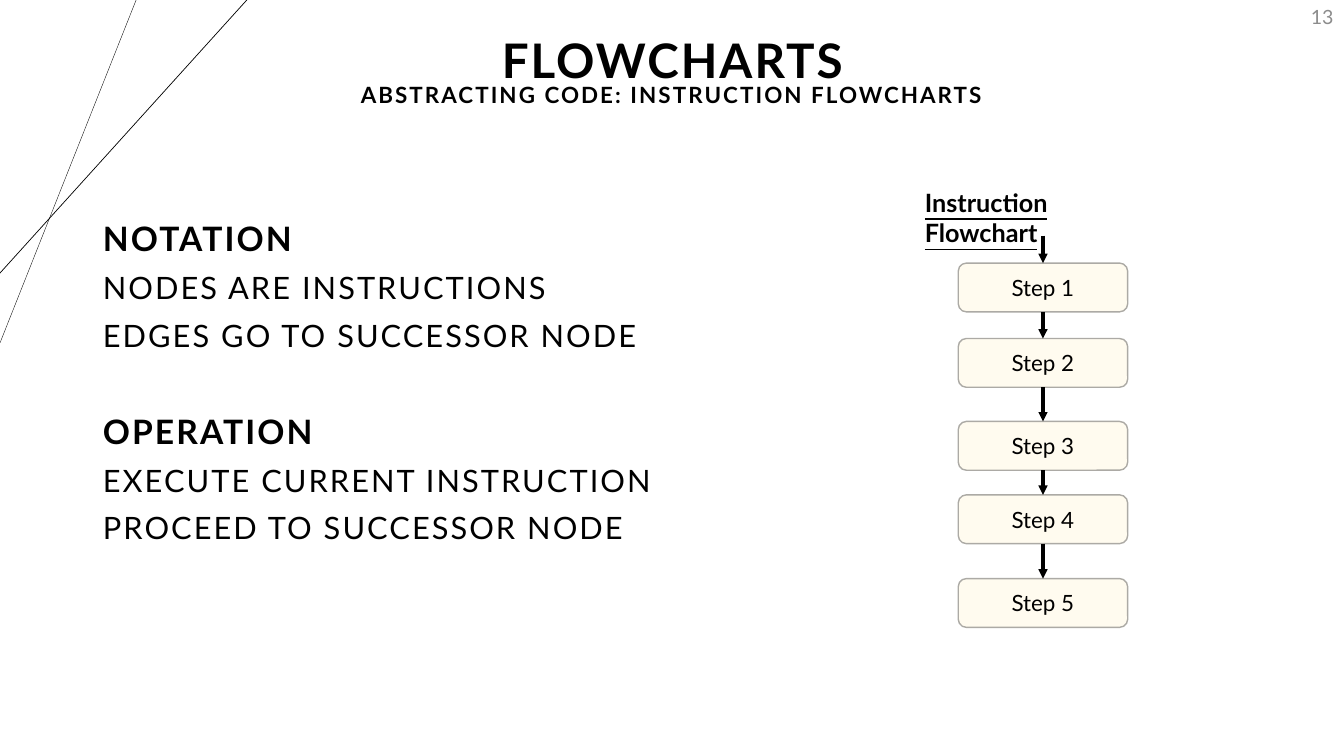
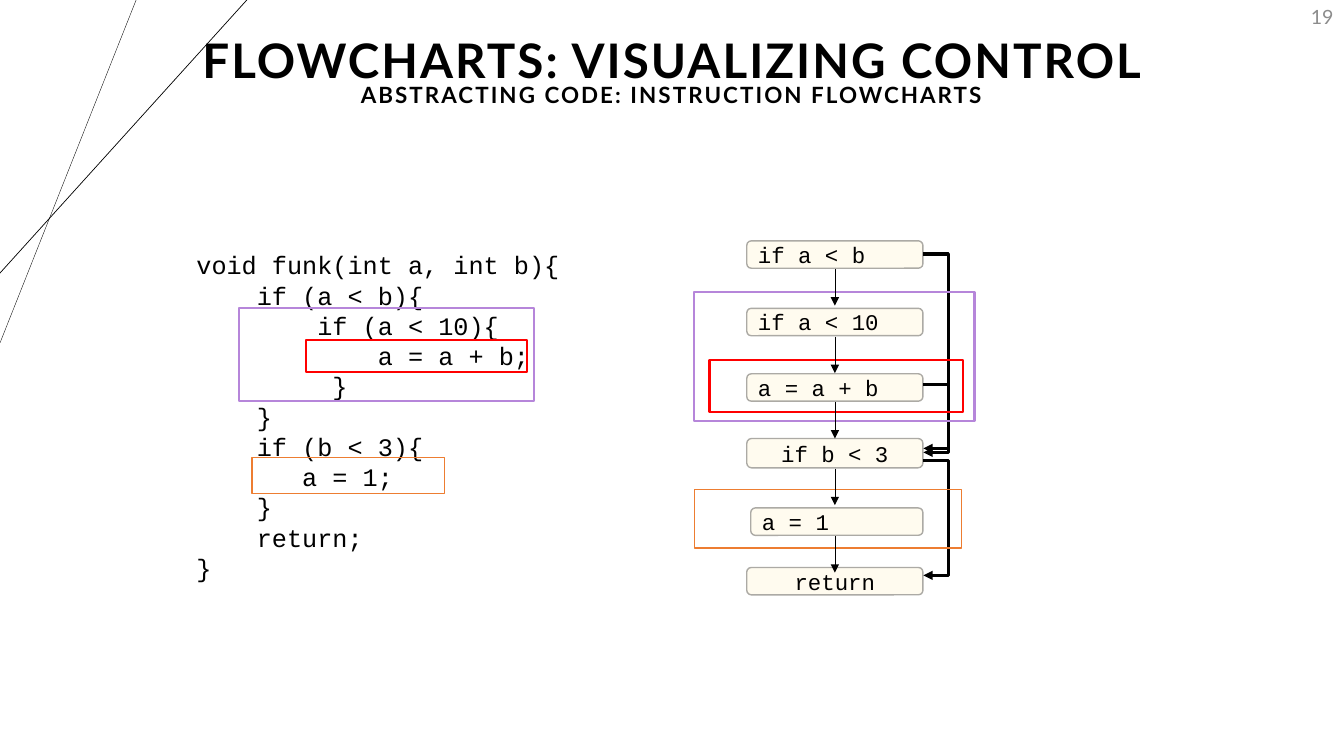
from lxml import etree
from pptx import Presentation
from pptx import util as u
from pptx.dml import color
from pptx.enum import shapes, text
from pptx.oxml import ns

BLACK = color.RGBColor(0x00, 0x00, 0x00)
GREY = color.RGBColor(0x8C, 0x8C, 0x8C)
CREAM = color.RGBColor(0xFF, 0xF2, 0xCC)
BORDER = color.RGBColor(0xAC, 0xAA, 0xA5)
ORANGE = color.RGBColor(0xED, 0x7D, 0x31)
PURPLE = color.RGBColor(0xB6, 0x86, 0xDA)
RED = color.RGBColor(0xFF, 0x00, 0x00)
SANS, MONO = "Lato", "Courier New"
LEFT, CENTER, RIGHT = text.PP_ALIGN.LEFT, text.PP_ALIGN.CENTER, text.PP_ALIGN.RIGHT
TITLE_ONLY, TITLE_AND_BODY = 5, 1
SUBTITLE = "ABSTRACTING CODE: INSTRUCTION FLOWCHARTS"

BODY = [  # text, size, bold, space before
    ("NOTATION", 24, True, 10),
    ("NODES ARE INSTRUCTIONS", 22, False, 10),
    ("EDGES GO TO SUCCESSOR NODE", 22, False, 10),
    ("OPERATION", 24, True, 44),
    ("EXECUTE CURRENT INSTRUCTION", 22, False, 10),
    ("PROCEED TO SUCCESSOR NODE", 22, False, 10),
]
STEP_OFFSETS = [0, 1.9, 3.99, 5.84, 7.95]
CODE = [  # indent in characters, text
    (0, "void funk(int a, int b){"), (4, "if (a < b){"), (8, "if (a < 10){"),
    (12, "a = a + b;"), (9, "}"), (4, "}"), (4, "if (b < 3){"),
    (7, "a = 1;"), (4, "}"), (4, "return;"), (0, "}"),
]
NODES = [  # text, top, inset from the left, height, alignment
    ("if a < b", 0, 0, 0.69, LEFT), ("if a < 10", 1.7, 0, 0.69, LEFT),
    ("a = a + b", 3.35, 0, 0.69, LEFT), ("if b < 3", 4.98, 0, 0.74, CENTER),
    ("a = 1", 6.73, 0.1, 0.69, LEFT), ("return", 8.23, 0, 0.69, CENTER),
]
JUMPS = [(0.33, 5.33), (3.61, 5.23), (5.54, 8.43)]  # from, to
CODE_FRAMES = [  # left, top, width, height, colour, line width
    (1.65, 5.36, 4.85, 0.91, ORANGE, 1),
    (1.32, 1.6, 7.44, 2.34, PURPLE, 1.5),
    (3.02, 2.39, 5.56, 0.81, RED, 1.5),
]
CHART_FRAMES = [
    (-1.32, 6.27, 6.73, 1.47, ORANGE, 1),
    (-1.32, 1.3, 7.06, 3.25, PURPLE, 1.5),
    (-0.94, 3, 6.38, 1.32, RED, 1.5),
]


def place(shape, left, top, width, height):
    shape.left, shape.top = u.Cm(left), u.Cm(top)
    shape.width, shape.height = u.Cm(width), u.Cm(height)


def add_run(paragraph, words, size, font=SANS, colour=BLACK, bold=False, tracking=0):
    run = paragraph.add_run()
    run.text = words
    run.font.name, run.font.size, run.font.bold = font, u.Pt(size), bold
    run.font.color.rgb = colour
    if tracking:
        run.font._element.set("spc", str(int(tracking * 100)))
    return run


def add_text_box(slide, left, top, width, height, anchor=text.MSO_ANCHOR.TOP):
    box = slide.shapes.add_textbox(u.Cm(left), u.Cm(top), u.Cm(width), u.Cm(height))
    box.text_frame.word_wrap = True
    box.text_frame.vertical_anchor = anchor
    return box.text_frame


def paragraph_at(frame, index):
    return frame.paragraphs[0] if index == 0 else frame.add_paragraph()


def add_line(slide, start, end, width, arrow=False, kind=shapes.MSO_CONNECTOR.STRAIGHT):
    points = [u.Cm(value) for value in (*start, *end)]
    line = slide.shapes.add_connector(kind, *points)
    line.line.color.rgb, line.line.width = BLACK, u.Pt(width)
    etree.SubElement(line._element.spPr, ns.qn("a:effectLst"))
    if arrow:
        etree.SubElement(line.line._get_or_add_ln(), ns.qn("a:tailEnd"), type="triangle")
    return line


def add_jump(slide, right, start, end, reach=0.64):
    """Arrow that leaves a node on the right and comes back lower down."""
    width = 0.01
    line = add_line(slide, (right, start), (right + width, end), 2.25, True,
                    shapes.MSO_CONNECTOR.ELBOW)
    guides = line._element.spPr.find(ns.qn("a:prstGeom")).get_or_add_avLst()
    etree.SubElement(guides, ns.qn("a:gd"), name="adj1",
                     fmla=f"val {round(reach / width * 100000)}")


def add_node(slide, words, left, top, width, height, font=SANS, align=CENTER):
    node = slide.shapes.add_shape(shapes.MSO_SHAPE.ROUNDED_RECTANGLE, u.Cm(left),
                                  u.Cm(top), u.Cm(width), u.Cm(height))
    node.shadow.inherit = False
    node.fill.solid()
    node.fill.fore_color.rgb = CREAM
    fill = node._element.spPr.find(ns.qn("a:solidFill"))
    etree.SubElement(fill[0], ns.qn("a:alpha"), val="30000")
    node.line.color.rgb, node.line.width = BORDER, u.Pt(1)
    node.text_frame.vertical_anchor = text.MSO_ANCHOR.MIDDLE
    paragraph = node.text_frame.paragraphs[0]
    paragraph.alignment = align
    add_run(paragraph, words, 16, font)


def add_frames(slide, left, top, frames):
    for dx, dy, width, height, colour, weight in frames:
        frame = slide.shapes.add_shape(shapes.MSO_SHAPE.RECTANGLE, u.Cm(left + dx),
                                       u.Cm(top + dy), u.Cm(width), u.Cm(height))
        frame.shadow.inherit = False
        frame.fill.background()
        frame.line.color.rgb, frame.line.width = colour, u.Pt(weight)


def add_heading(frame, words, size):
    frame.vertical_anchor = text.MSO_ANCHOR.MIDDLE
    paragraph = frame.paragraphs[0]
    paragraph.alignment, paragraph.line_spacing = CENTER, 0.9
    add_run(paragraph, words, size, bold=True, tracking=1.5)


def add_base_slide(presentation, layout, title, number):
    """Slide with the corner lines, page number, title and subtitle."""
    slide = presentation.slides.add_slide(presentation.slide_layouts[layout])
    add_line(slide, (3.43, 0), (0, 8.64), 0.25)
    add_line(slide, (6.22, 0), (0, 6.88), 0.5)
    paragraph = add_text_box(slide, 26.24, -0.1, 7.62, 1.02,
                             text.MSO_ANCHOR.MIDDLE).paragraphs[0]
    paragraph.alignment = RIGHT
    add_run(paragraph, number, 14, colour=GREY)
    place(slide.shapes.title, 0.05, -0.25, 33.8, 3.68)
    slide.shapes.title.text_frame.auto_size = text.MSO_AUTO_SIZE.NONE
    add_heading(slide.shapes.title.text_frame, title, 34)
    add_heading(add_text_box(slide, 0.03, 0.58, 33.8, 3.68), SUBTITLE, 16)
    return slide


def fill_body(body, left, top, width, height):
    place(body, left, top, width, height)
    frame = body.text_frame
    frame.auto_size = text.MSO_AUTO_SIZE.NONE
    for index, (words, size, bold, before) in enumerate(BODY):
        paragraph = paragraph_at(frame, index)
        paragraph.line_spacing, paragraph.space_before = 0.9, u.Pt(before)
        properties = paragraph._p.get_or_add_pPr()
        properties.set("marL", "0")
        properties.set("indent", "0")
        etree.SubElement(properties, ns.qn("a:buNone"))
        add_run(paragraph, words, size, bold=bold, tracking=1.5)


def add_step_chart(slide, left, top, width=4.27, height=1.23):
    label = add_text_box(slide, left - 1.09, top - 2.03, 4.1, 1.8)
    add_run(label.paragraphs[0], "Instruction Flowchart", 18, bold=True).font.underline = True
    middle = left + width / 2
    previous_bottom = top - 0.69
    for index, offset in enumerate(STEP_OFFSETS, 1):
        step_top = top + offset
        add_node(slide, f"Step {index}", left, step_top, width, height)
        add_line(slide, (middle, previous_bottom), (middle, step_top), 2.25, True)
        previous_bottom = step_top + height


def add_code(slide, left, top, width=10, height=8.71):
    frame = add_text_box(slide, left, top, width, height)
    for index, (indent, words) in enumerate(CODE):
        paragraph = paragraph_at(frame, index)
        paragraph._p.get_or_add_pPr().set("marL", str(int(u.Pt(10.8 * indent))))
        add_run(paragraph, words, 18, MONO)
    add_frames(slide, left, top, CODE_FRAMES)


def add_control_chart(slide, left, top, width=4.44):
    for words, offset, inset, height, align in NODES:
        add_node(slide, words, left + inset, top + offset, width - inset, height, MONO, align)
    for start, end in JUMPS:
        add_jump(slide, left + width, top + start, top + end)
    add_frames(slide, left, top, CHART_FRAMES)
    # Arrows between neighbouring nodes
    middle = left + width / 2
    for _, offset, _, height, _ in NODES[:-1]:
        start = top + offset + height + 0.02
        add_line(slide, (middle, start), (middle, start + 0.92), 0.5, True)


def main():
    presentation = Presentation()
    presentation.slide_width, presentation.slide_height = u.Cm(33.87), u.Cm(19.05)

    # Notation and steps
    slide = add_base_slide(presentation, TITLE_AND_BODY, "FLOWCHARTS", "13")
    fill_body(slide.placeholders[1], 2.34, 5.49, 15.37, 12.57)
    add_step_chart(slide, 24.15, 6.63)

    # Code beside its flowchart
    slide = add_base_slide(presentation, TITLE_ONLY, "FLOWCHARTS: VISUALIZING CONTROL", "19")
    add_code(slide, 4.7, 6.17)
    add_control_chart(slide, 18.82, 6.07)

    presentation.save("out.pptx")


if __name__ == "__main__":
    main()
